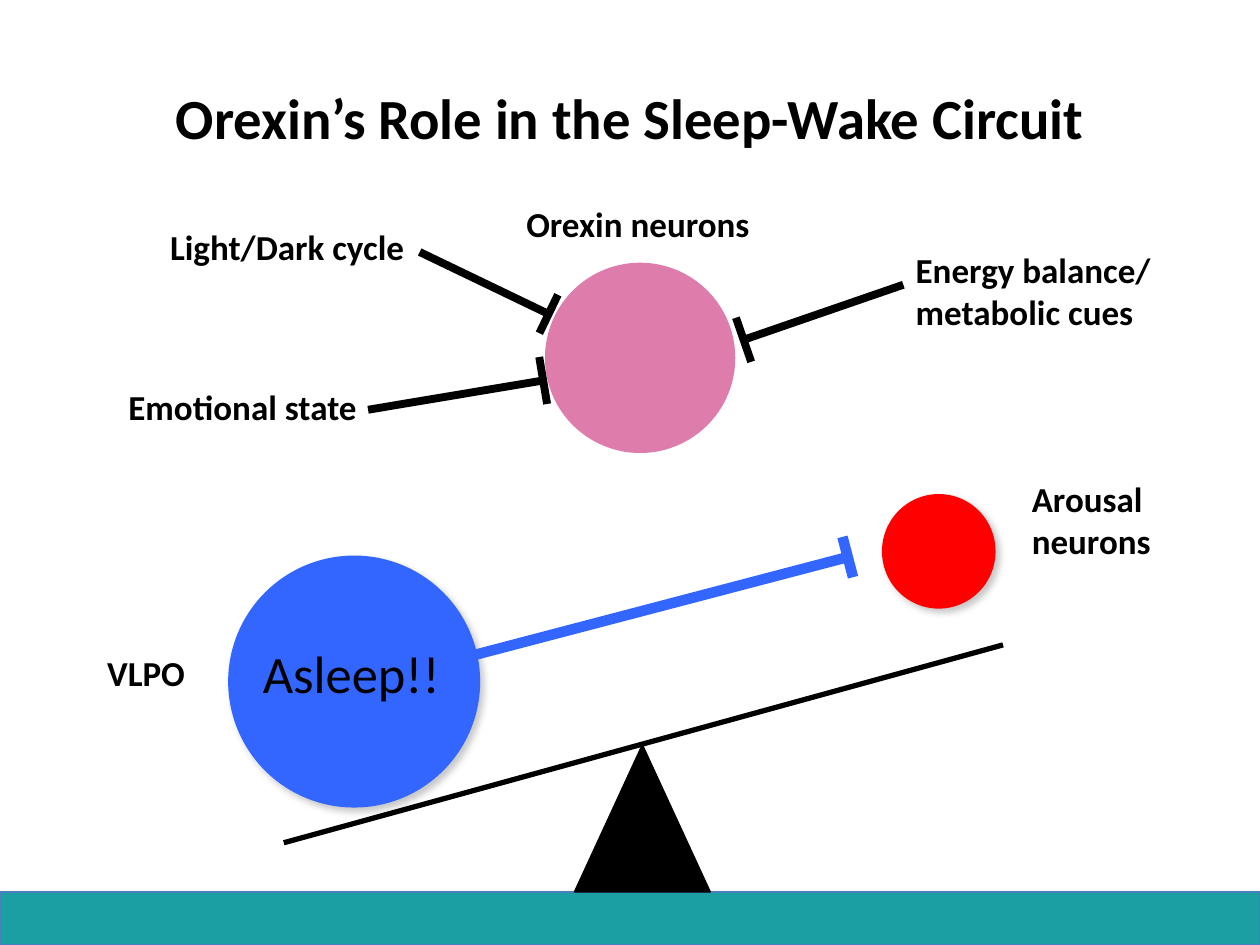
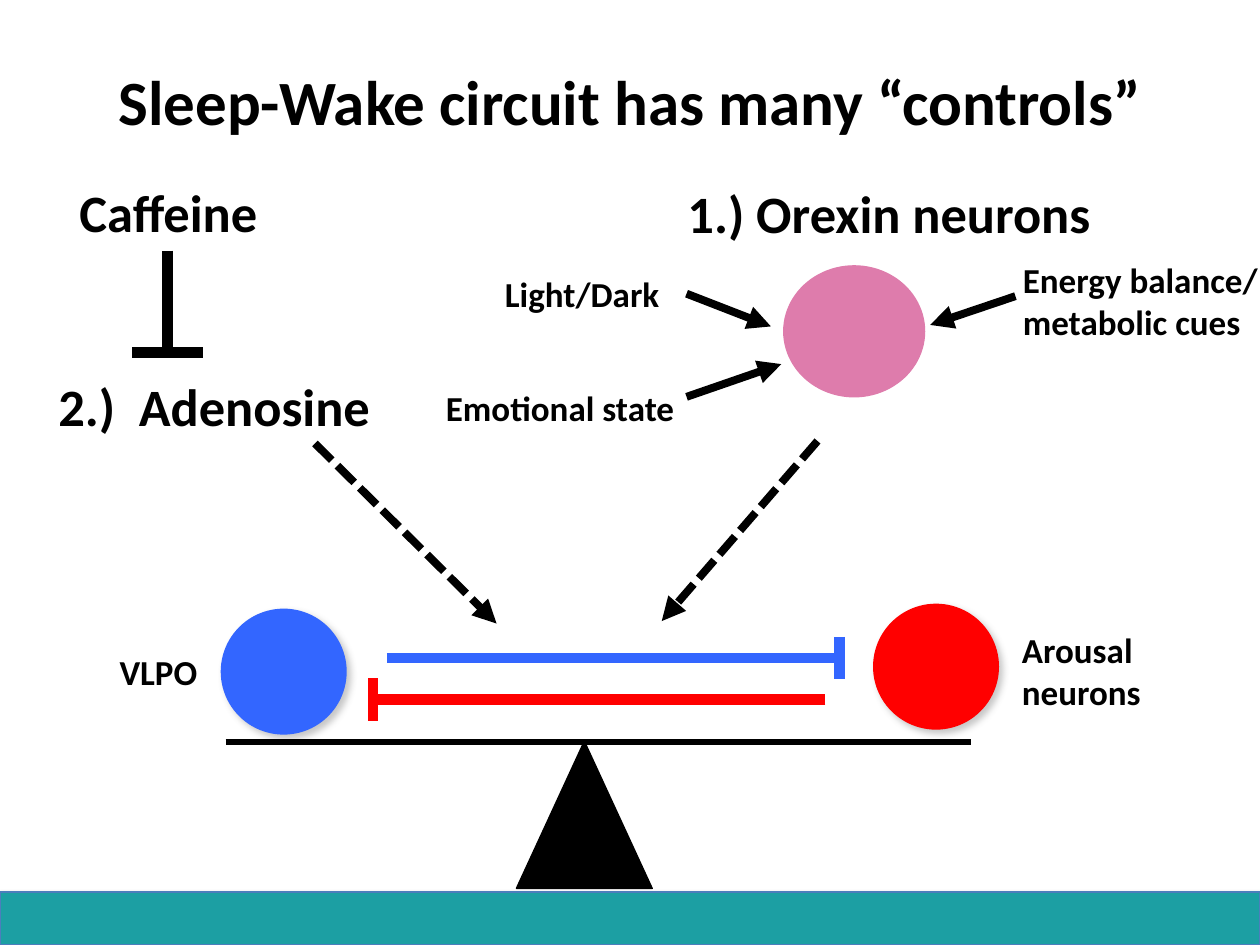
from dataclasses import dataclass
from math import hypot
from typing import Any, NamedTuple

from lxml import etree
from pptx import Presentation
from pptx.dml.color import RGBColor
from pptx.enum.dml import MSO_LINE
from pptx.enum.shapes import MSO_CONNECTOR, MSO_SHAPE
from pptx.enum.text import MSO_ANCHOR, MSO_AUTO_SIZE, PP_ALIGN
from pptx.oxml.ns import qn
from pptx.util import Cm, Pt

RECTANGLE, ELLIPSE, TRIANGLE = MSO_SHAPE.RECTANGLE, MSO_SHAPE.OVAL, MSO_SHAPE.ISOSCELES_TRIANGLE
STRAIGHT = MSO_CONNECTOR.STRAIGHT
SHORT_DASH = MSO_LINE.SQUARE_DOT
LEFT, CENTER = PP_ALIGN.LEFT, PP_ALIGN.CENTER
MIDDLE = MSO_ANCHOR.MIDDLE
FIT_SHAPE, NO_FIT = MSO_AUTO_SIZE.SHAPE_TO_FIT_TEXT, MSO_AUTO_SIZE.NONE
TITLE_ONLY = 5


class Shadow(NamedTuple):
    color: str
    opacity: int
    blur: float
    distance: float
    angle: int


class Place(NamedTuple):
    """Left, top, width and height in centimetres."""
    left: float
    top: float
    width: float
    height: float


class Point(NamedTuple):
    x: float
    y: float


@dataclass(frozen=True)
class Theme:
    font: str = "Calibri"
    ink: str = "000000"
    vlpo: str = "3366FF"
    arousal: str = "FF0000"
    orexin: str = "DE7CAC"
    band: str = "1C9FA3"
    band_edge: str = "4B7EBC"
    label: float = 20
    heading: float = 30
    hairline: float = 0.75
    plank: float = 3
    cue: float = 4.5
    inhibitor: float = 6
    band_shadow: Shadow = Shadow("000000", 35, 3.1, 1.8, 90)
    neuron_shadow: Shadow = Shadow("808080", 43, 4, 3, 45)


THEME = Theme()


@dataclass(frozen=True)
class Solid:
    place: Place
    fill: str
    kind: Any = ELLIPSE
    edge: str | None = None
    shadow: Shadow | None = None


@dataclass(frozen=True)
class Link:
    start: Point
    end: Point
    width: float = THEME.cue
    color: str = THEME.ink
    arrow: bool = False
    dashed: bool = False
    bar: float = 0  # length of the crossbar at the end


@dataclass(frozen=True)
class Label:
    text: str
    place: Place
    size: float = THEME.label
    bold: bool = True
    align: Any = LEFT
    wrap: bool = False


@dataclass(frozen=True)
class Scene:
    title: str
    title_size: float
    title_place: Place
    solids: list[Solid]
    links: list[Link]
    labels: list[Label]


# Parts that both slides use
def neuron(place: Place, color: str) -> Solid:
    return Solid(place, color, shadow=THEME.neuron_shadow)


def orexin_neuron(place: Place) -> Solid:
    return Solid(place, THEME.orexin, edge=THEME.orexin)


def fulcrum(left: float, top: float) -> Solid:
    return Solid(Place(left, top, 2.74, 2.97), THEME.ink, TRIANGLE, THEME.ink)


def arousal_label(left: float, top: float) -> Label:
    return Label("Arousal\nneurons", Place(left, top, 2.97, 1.96))


def energy_label(left: float, top: float) -> Label:
    return Label("Energy balance/\nmetabolic cues", Place(left, top, 5.46, 1.96))


# Drawing
def set_all(target: Any, values: dict[str, Any]) -> None:
    for name, value in values.items():
        setattr(target, name, value)


def rgb(color: str) -> RGBColor:
    return RGBColor.from_string(color)


def lengths(place: Place | Point) -> list[Cm]:
    return [Cm(value) for value in place]


def write_text(frame: Any, text: str, size: float, bold: bool, align: Any) -> None:
    frame.text = text
    for para in frame.paragraphs:
        para.alignment = align
        for span in para.runs:
            set_all(span.font, {"name": THEME.font, "size": Pt(size), "bold": bold})
            span.font.color.rgb = rgb(THEME.ink)


def add_shadow(shape: Any, shadow: Shadow) -> None:
    effects = shape.element.spPr.find(qn("a:effectLst"))
    outer = etree.SubElement(effects, qn("a:outerShdw"), {
        "blurRad": str(Pt(shadow.blur)), "dist": str(Pt(shadow.distance)),
        "dir": str(shadow.angle * 60000), "algn": "ctr", "rotWithShape": "0"})
    color = etree.SubElement(outer, qn("a:srgbClr"), val=shadow.color)
    etree.SubElement(color, qn("a:alpha"), val=str(shadow.opacity * 1000))


def draw_solid(page: Any, solid: Solid) -> Any:
    shape = page.shapes.add_shape(solid.kind, *lengths(solid.place))
    shape.shadow.inherit = False
    shape.fill.solid()
    shape.fill.fore_color.rgb = rgb(solid.fill)
    if solid.edge:
        shape.line.color.rgb = rgb(solid.edge)
        shape.line.width = Pt(THEME.hairline)
    else:
        shape.line.fill.background()
    if solid.shadow:
        add_shadow(shape, solid.shadow)
    return shape


def crossbar(link: Link) -> Link:
    """A line square to the link, centred on its end."""
    (x, y), dx, dy = link.end, link.end.x - link.start.x, link.end.y - link.start.y
    scale = link.bar / 2 / hypot(dx, dy)
    across, down = -dy * scale, dx * scale
    return Link(Point(x - across, y - down), Point(x + across, y + down), link.width, link.color)


def draw_link(page: Any, link: Link) -> None:
    line = page.shapes.add_connector(STRAIGHT, *lengths(link.start), *lengths(link.end))
    line.line.color.rgb = rgb(link.color)
    line.line.width = Pt(link.width)
    if link.dashed:
        line.line.dash_style = SHORT_DASH
    properties = line.element.spPr
    if link.arrow:
        etree.SubElement(properties.find(qn("a:ln")), qn("a:tailEnd"), type="triangle")
    etree.SubElement(properties, qn("a:effectLst"))
    if link.bar:
        draw_link(page, crossbar(link))


def draw_label(page: Any, label: Label) -> None:
    frame = page.shapes.add_textbox(*lengths(label.place)).text_frame
    set_all(frame, {"word_wrap": label.wrap, "auto_size": FIT_SHAPE})
    write_text(frame, label.text, label.size, label.bold, label.align)


def draw_title(page: Any, scene: Scene) -> None:
    title = page.shapes.title
    set_all(title, dict(zip(Place._fields, lengths(scene.title_place))))
    set_all(title.text_frame, {"vertical_anchor": MIDDLE, "auto_size": NO_FIT})
    write_text(title.text_frame, scene.title, scene.title_size, True, CENTER)


def draw_scene(page: Any, scene: Scene) -> None:
    draw_title(page, scene)
    for solid in scene.solids:
        draw_solid(page, solid)
    for link in scene.links:
        draw_link(page, link)
    for label in scene.labels:
        draw_label(page, label)


def move_band_to_layout(page: Any, layout: Any) -> None:
    band = draw_solid(page, Solid(Place(0, 17.98, 25.4, 1.07), THEME.band, RECTANGLE,
                                  THEME.band_edge, THEME.band_shadow))
    layout.shapes.element.insert(2, band.element)


# Content
OREXIN_ROLE = Scene(
    "Orexin’s Role in the Sleep-Wake Circuit", 32.4, Place(1.27, 0.76, 22.86, 3.18),
    solids=[
        neuron(Place(4.6, 11.2, 5.08, 5.08), THEME.vlpo),
        neuron(Place(17.78, 9.96, 2.29, 2.31), THEME.arousal),
        fulcrum(11.58, 15.01),
        orexin_neuron(Place(11, 5.31, 3.81, 3.81)),
    ],
    links=[
        Link(Point(5.72, 16.99), Point(20.22, 13), THEME.plank),
        Link(Point(9.35, 13.26), Point(17.09, 11.23), THEME.inhibitor, THEME.vlpo, bar=0.84),
        Link(Point(8.46, 5.08), Point(11.06, 6.33), bar=0.86),
        Link(Point(7.42, 8.26), Point(10.95, 7.67), bar=0.96),
        Link(Point(18.21, 5.74), Point(14.99, 6.85), bar=0.94),
    ],
    labels=[
        arousal_label(20.55, 9.5),
        Label("VLPO", Place(1.91, 13, 2.11, 1.12)),
        Label("Asleep!!", Place(5.05, 12.8, 4.11, 1.55), THEME.heading, bold=False),
        energy_label(18.21, 4.88),
        Label("Light/Dark cycle", Place(3.18, 4.42, 5.28, 1.12)),
        Label("Emotional state", Place(2.34, 7.65, 5.28, 1.12)),
        Label("Orexin neurons", Place(10.36, 3.96, 5.51, 1.12), wrap=True),
    ],
)

CONTROLS = Scene(
    "Sleep-Wake circuit has many “controls”", 36, Place(0, 0.43, 25.4, 3.18),
    solids=[
        neuron(Place(4.45, 12.27, 2.54, 2.54), THEME.vlpo),
        neuron(Place(17.6, 12.17, 2.54, 2.54), THEME.arousal),
        fulcrum(10.41, 14.94),
        orexin_neuron(Place(15.8, 5.36, 2.84, 2.64)),
    ],
    links=[
        Link(Point(4.55, 14.96), Point(19.58, 14.96), THEME.plank),
        Link(Point(7.8, 13.26), Point(16.92, 13.26), THEME.inhibitor, THEME.vlpo, bar=0.84),
        Link(Point(16.64, 14.1), Point(7.52, 14.1), THEME.inhibitor, THEME.arousal, bar=0.86),
        Link(Point(3.38, 5.05), Point(3.38, 7.11), THEME.inhibitor, bar=1.42),
        Link(Point(13.84, 5.92), Point(15.54, 6.58), arrow=True),
        Link(Point(13.84, 8), Point(15.75, 7.34), arrow=True),
        Link(Point(20.47, 5.97), Point(18.75, 6.55), arrow=True),
        Link(Point(6.35, 8.94), Point(10.01, 12.57), arrow=True, dashed=True),
        Link(Point(16.48, 8.89), Point(13.34, 12.52), arrow=True, dashed=True),
    ],
    labels=[
        arousal_label(20.35, 12.55),
        Label("VLPO", Place(2.16, 12.98, 2.08, 1.12)),
        Label("2.)  Adenosine", Place(0.84, 7.42, 6.96, 1.55), THEME.heading, align=CENTER, wrap=True),
        Label("Caffeine", Place(0.64, 3.51, 5.51, 1.55), THEME.heading, align=CENTER, wrap=True),
        energy_label(20.37, 5.08),
        Label("Light/Dark", Place(9.93, 5.36, 3.66, 1.12)),
        Label("Emotional state", Place(8.74, 7.67, 5.16, 1.12)),
        Label("1.) Orexin neurons", Place(13.61, 3.53, 9.5, 1.55), THEME.heading, wrap=True),
    ],
)


def main() -> None:
    deck = Presentation()
    set_all(deck, {"slide_width": Cm(25.4), "slide_height": Cm(19.05)})
    layout = deck.slide_layouts[TITLE_ONLY]
    pages = [deck.slides.add_slide(layout) for _ in range(2)]
    move_band_to_layout(pages[0], layout)
    for page, scene in zip(pages, (OREXIN_ROLE, CONTROLS)):
        draw_scene(page, scene)
    deck.save("out.pptx")


if __name__ == "__main__":
    main()
